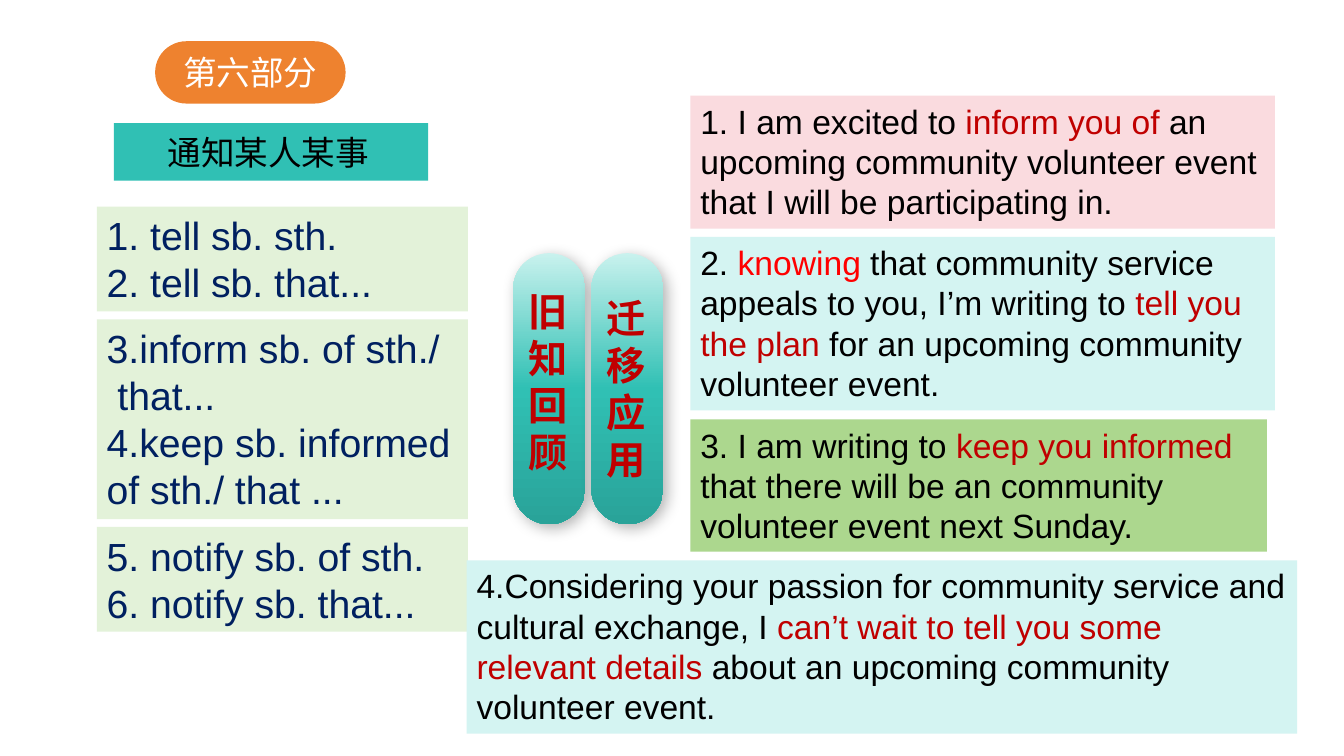
from lxml import etree
from pptx import Presentation
from pptx import util as u
from pptx.dml.color import RGBColor
from pptx.enum import shapes, text
from pptx.oxml.ns import qn

Cm, Pt = u.Cm, u.Pt
HUES = {
    "white": "FFFFFF", "black": "000000", "navy": "002060",
    "crimson": "C00000", "red": "FF0000", "orange": "EE822F",
    "teal": "30C0B4", "light": "C9F2EE", "deep": "29A399",
    "mint": "E3F2D9", "pink": "FADBDF", "aqua": "D4F4F2", "green": "ACD78E",
}
CJK = "Noto Sans CJK SC"


def write(shape, lines, size, hues, face="Arial", bold=False, align=text.PP_ALIGN.LEFT):
    """Fill a shape with lines; "|" parts a line into runs that take the hues in turn."""
    frame = shape.text_frame
    frame.word_wrap = True
    frame.auto_size = text.MSO_AUTO_SIZE.NONE
    for i, line in enumerate(lines):
        para = frame.paragraphs[0] if i == 0 else frame.add_paragraph()
        para.alignment = align
        para.line_spacing = Pt(size * 1.2)
        for part, hue in zip(line.split("|"), hues):
            run = para.add_run()
            run.text = part
            font = run.font
            font.size, font.bold, font.name = Pt(size), bold, face
            font.color.rgb = RGBColor.from_string(HUES[hue])
            etree.SubElement(run._r.rPr, qn("a:ea"), typeface=CJK)


def panel(kind, left, top, width, height, hue):
    shape = deck.add_shape(kind, Cm(left), Cm(top), Cm(width), Cm(height))
    shape.fill.solid()
    shape.fill.fore_color.rgb = RGBColor.from_string(HUES[hue])
    shape.line.fill.background()
    shape.shadow.inherit = False
    return shape


prs = Presentation()
prs.slide_width, prs.slide_height = Cm(33.87), Cm(19.05)
slide = prs.slides.add_slide(prs.slide_layouts[5])
deck = slide.shapes
RECT = shapes.MSO_SHAPE.RECTANGLE
ROUND = shapes.MSO_SHAPE.ROUNDED_RECTANGLE
MID = text.PP_ALIGN.CENTER

# Title bar
title = deck.title
title.left, title.top, title.width, title.height = Cm(2.87), Cm(3.1), Cm(7.92), Cm(1.45)
title.fill.solid()
title.fill.fore_color.rgb = RGBColor.from_string(HUES["teal"])
title.text_frame.margin_left = Cm(1.35)
title.text_frame.vertical_anchor = text.MSO_ANCHOR.MIDDLE
write(title, ["通知某人某事"], 24, ["black"])

# Part badge
badge = panel(ROUND, 3.91, 1.04, 4.8, 1.57, "orange")
badge.adjustments[0] = 0.5
badge.text_frame.vertical_anchor = text.MSO_ANCHOR.MIDDLE
write(badge, ["第六部分"], 24, ["white"], CJK, align=MID)

# Two upright pills
for left, top, word in [(12.93, 7.11, "旧知回顾"), (14.9, 7.29, "迁移应用")]:
    pill = panel(ROUND, left, 6.38, 1.82, 6.83, "teal")
    pill.adjustments[0] = 0.5
    pill.fill.gradient()
    pill.fill.gradient_angle = 270
    props = pill._element.spPr
    stops = props.find(qn("a:gradFill")).find(qn("a:gsLst"))
    stops.clear()
    for spot, hue in [(0, "light"), (50, "teal"), (100, "deep")]:
        stop = etree.SubElement(stops, qn("a:gs"), pos=str(spot * 1000))
        etree.SubElement(stop, qn("a:srgbClr"), val=HUES[hue])
    shade = etree.SubElement(
        props.find(qn("a:effectLst")), qn("a:outerShdw"),
        blurRad=str(Pt(11)), dist=str(Pt(4)), dir="2700000", algn="tl", rotWithShape="0")
    tint = etree.SubElement(shade, qn("a:srgbClr"), val=HUES["black"])
    etree.SubElement(tint, qn("a:alpha"), val="29000")
    label = deck.add_textbox(Cm(left), Cm(top), Cm(1.78), Cm(5.03))
    write(label, word, 28, ["crimson"], CJK, True, MID)

# Phrases on the left
phrases = [
    (5.21, 2.64, ["1. tell sb. sth.", "2. tell sb. that..."]),
    (8.05, 5.03, ["3.inform sb. of sth./", "that...",
                  "4.keep sb. informed of sth./ that ..."]),
    (13.28, 2.64, ["5. notify sb. of sth.", "6. notify sb. that..."]),
]
for top, height, lines in phrases:
    card = panel(RECT, 2.44, top, 9.35, height, "mint")
    card.text_frame.vertical_anchor = text.MSO_ANCHOR.TOP
    write(card, lines, 28, ["navy"])
    for para in card.text_frame.paragraphs:
        if para.text == "that...":
            para._p.get_or_add_pPr().set("marL", str(Cm(0.27)))

# Model sentences on the right
models = [
    (17.4, 2.41, 14.73, 3.35, "pink", ["black", "crimson", "black"],
     "1. I am excited to |inform you of |an upcoming community volunteer event "
     "that I will be participating in."),
    (17.4, 5.97, 14.73, 4.37, "aqua", ["black", "red", "black", "crimson", "black"],
     "2. |knowing| that community service appeals to you, I’m writing to"
     "| tell you the plan| for an upcoming community volunteer event."),
    (17.4, 10.57, 14.53, 3.33, "green", ["black", "crimson", "black"],
     "3. I am writing to |keep you informed |that there will be an community "
     "volunteer event next Sunday."),
    (11.76, 14.12, 20.93, 4.37, "aqua", ["black", "crimson", "black"],
     "4.Considering your passion for community service and cultural exchange, I"
     "| can’t wait to tell you some relevant details |about an upcoming community "
     "volunteer event."),
]
for left, top, width, height, fill, hues, line in models:
    card = panel(RECT, left, top, width, height, fill)
    card.text_frame.vertical_anchor = text.MSO_ANCHOR.TOP
    write(card, [line], 24, hues)

prs.save("out.pptx")
